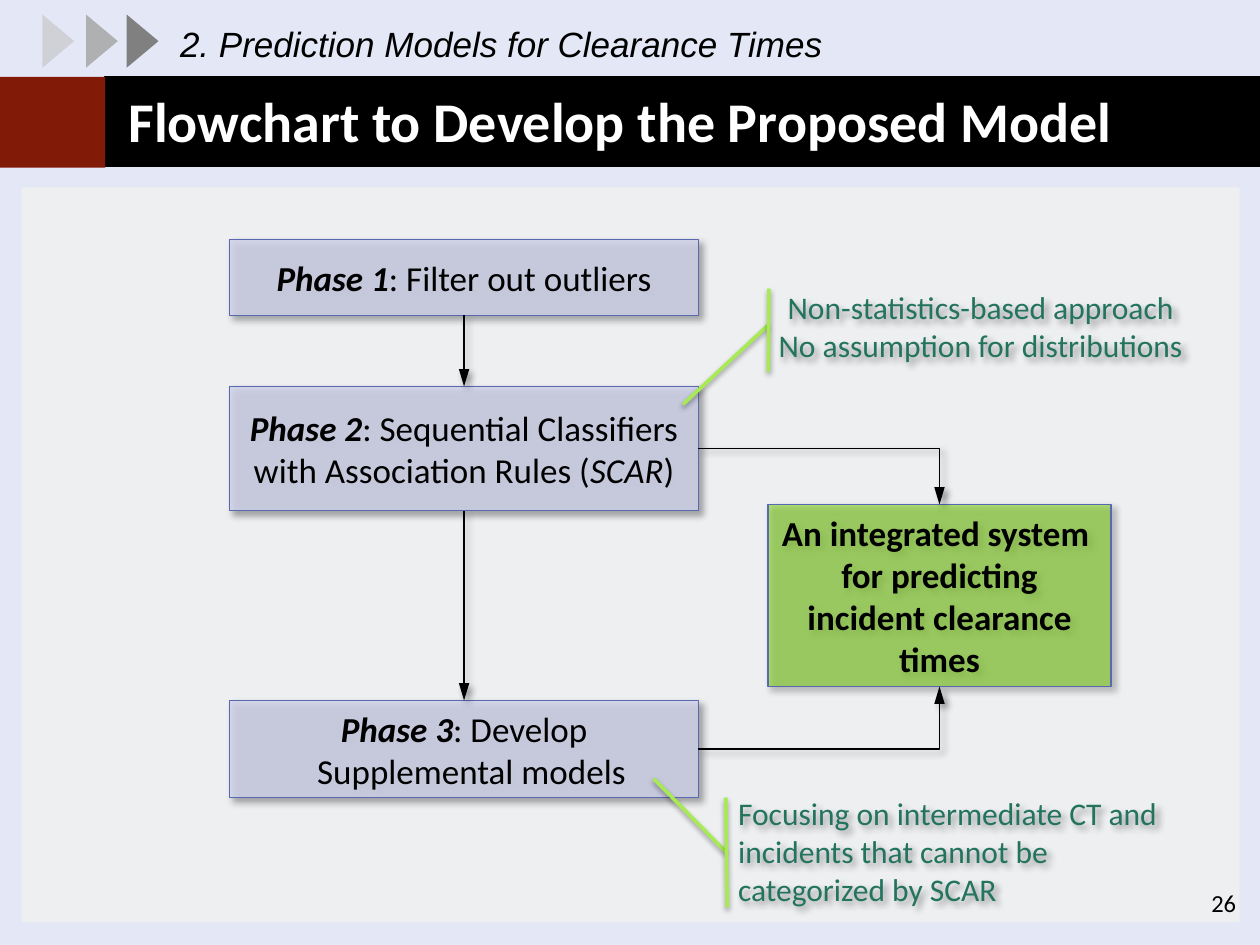
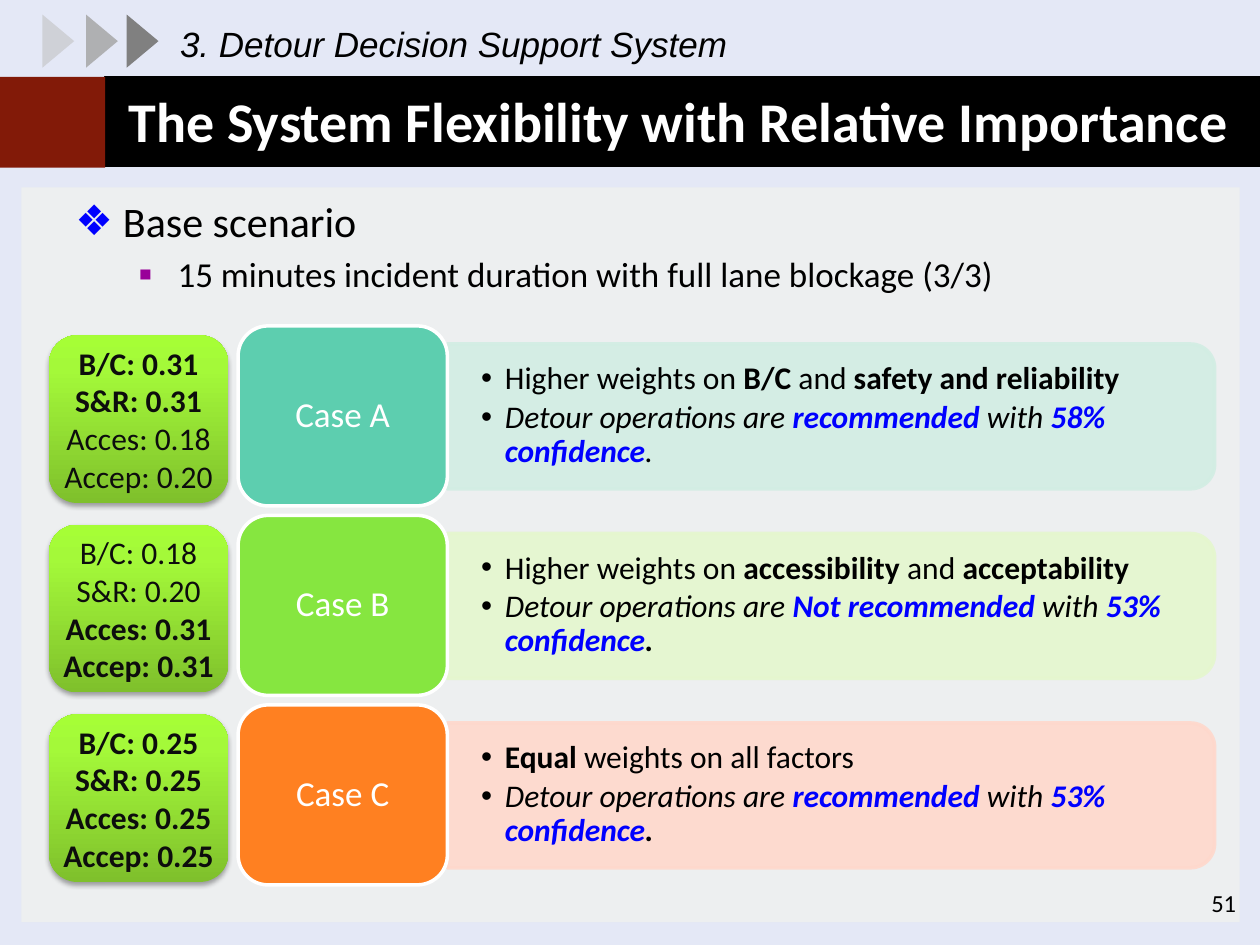
from copy import deepcopy

from lxml import etree
from pptx import Presentation
from pptx.dml.color import RGBColor
from pptx.enum.shapes import MSO_CONNECTOR, MSO_SHAPE
from pptx.enum.text import MSO_ANCHOR, PP_ALIGN
from pptx.oxml.ns import qn
from pptx.util import Cm, Pt

RECT = MSO_SHAPE.RECTANGLE
ROUND = MSO_SHAPE.ROUNDED_RECTANGLE
TAB_BAR = MSO_SHAPE.ROUND_2_SAME_RECTANGLE
WEDGE = MSO_SHAPE.ISOSCELES_TRIANGLE
LEFT, MID, RIGHT = PP_ALIGN.LEFT, PP_ALIGN.CENTER, PP_ALIGN.RIGHT
TOP, CENTRE = MSO_ANCHOR.TOP, MSO_ANCHOR.MIDDLE
LINE, ELBOW = MSO_CONNECTOR.STRAIGHT, MSO_CONNECTOR.ELBOW

COLORS = {
    "back": "E4E8F6", "cream": "FFFFCC", "white": "FFFFFF", "black": "000000",
    "red": "821A08", "dark": "808080", "mid": "A6A6A6", "pale": "BFBFBF",
    "phase": "D0D3EB", "edge": "5968B0", "goal": "81D31A",
    "note": "23735D", "lime": "A7EA52", "ink": "0D0D0D",
    "blue": "0000FF", "plum": "990099",
    "teal": "5DCEAF", "mint": "D2EDE3", "green": "86E640", "leaf": "E5F7CE",
    "orange": "FF8021", "peach": "FFD8CC",
}
GLOW = [(0, "7FC02C"), (0.8, "A4F939"), (1, "A6FE36")]
# Shadows: opacity in percent, blur and distance in points, angle in degrees
SOFT = (40, 4, 3, 45)
THIN = (38, 3.1, 1.6, 90)
DROP = (35, 3.1, 1.8, 90)


def rgb(name):
    return RGBColor.from_string(COLORS[name])


def sub(node, tag, **attrs):
    return etree.SubElement(node, qn(tag), {k: str(v) for k, v in attrs.items()})


class Deck:
    def __init__(self):
        self.prs = Presentation()
        self.prs.slide_width, self.prs.slide_height = Cm(25.4), Cm(19.05)
        self.slide = None

    def start(self, part, title, number):
        """Add a slide with its background, bands, title and number."""
        self.slide = self.prs.slides.add_slide(self.prs.slide_layouts[6])
        fill = self.slide.background.fill
        fill.solid()
        fill.fore_color.rgb = rgb("back")
        panel = (0.43, 3.78, 24.56, 14.81)
        self.shape(RECT, panel, "cream", 20)
        self.shape(RECT, (2.12, 1.55, 23.28, 1.8), "black", line="black")
        self.shape(RECT, (0, 1.55, 2.12, 1.83), "red")
        for x, color, alpha in ((2.34, "dark", 100), (1.52, "mid", 84), (0.64, "pale", 56)):
            self.shape(WEDGE, (x, 0.51, 1.07, 0.64), color, alpha).rotation = 90
        self.shape(RECT, panel, "white", 20)
        head = self.box((2.34, 1.63, 22.86, 1.57), CENTRE)
        self.para(head, [(title, "b")], 32, "white")
        self.para(self.box((3.38, 0.33, 18.62, 1.12)), [(part, "i")], 20, font="Arial")
        self.para(self.box((19.25, 17.78, 5.92, 0.89)), [(number, "")], 14, align=RIGHT)

    def shape(self, kind, area, fill=None, alpha=100, line=None, width=0.75, shade=None):
        """Add a shape; without a fill name it gets the green gradient."""
        shape = self.slide.shapes.add_shape(kind, *map(Cm, area))
        props = shape.element.spPr
        if fill:
            shape.fill.solid()
            shape.fill.fore_color.rgb = rgb(fill)
        else:
            self.glow(shape)
        if line:
            shape.line.color.rgb = rgb(line)
            shape.line.width = Pt(width)
        else:
            shape.line.fill.background()
        if alpha < 100:
            for color in props.iter(qn("a:srgbClr")):
                if color.get("val") == COLORS[fill]:
                    sub(color, "a:alpha", val=alpha * 1000)
        self.shade(shape, shade)
        return shape

    def glow(self, shape):
        shape.fill.gradient()
        shape.fill.gradient_angle = 90
        stops = shape.element.spPr.find(".//" + qn("a:gsLst"))
        stops.append(deepcopy(stops[-1]))
        for stop, (place, color) in zip(shape.fill.gradient_stops, GLOW):
            stop.position = place
            stop.color.rgb = RGBColor.from_string(color)

    def shade(self, shape, look):
        """Replace the theme's shadow by the given one, or by none."""
        effects = sub(shape.element.spPr, "a:effectLst")
        if look:
            alpha, blur, dist, angle = look
            cast = sub(effects, "a:outerShdw", blurRad=Pt(blur), dist=Pt(dist),
                       dir=angle * 60000, algn="tl", rotWithShape=0)
            color = sub(cast, "a:srgbClr", val=COLORS["black"])
            sub(color, "a:alpha", val=alpha * 1000)

    def link(self, ends, color="black", width=0.75, kind=LINE, arrow=True, shade=SOFT):
        link = self.slide.shapes.add_connector(kind, *map(Cm, ends))
        link.line.color.rgb = rgb(color)
        link.line.width = Pt(width)
        props = link.element.spPr
        if kind == ELBOW:
            props.find(qn("a:prstGeom")).set("prst", "bentConnector2")
        if arrow:
            sub(props.find(qn("a:ln")), "a:tailEnd", type="triangle", w="med", len="lg")
        self.shade(link, shade)

    def box(self, area, anchor=TOP, pad=(0.25, 0.13), shade=None):
        box = self.slide.shapes.add_textbox(*map(Cm, area))
        if shade:
            self.shade(box, shade)
        return self.frame(box, anchor, pad)

    def frame(self, shape, anchor=CENTRE, pad=(0.25, 0.13)):
        frame = shape.text_frame
        frame.word_wrap = True
        frame.vertical_anchor = anchor
        frame.margin_left = frame.margin_right = Cm(pad[0])
        frame.margin_top = frame.margin_bottom = Cm(pad[1])
        return frame

    def para(self, frame, runs, size, color="black", font="Calibri", align=LEFT,
             indent=0, hang=0, before=0, after=0, space=1.0, bullet=None):
        """Add a paragraph; run marks are b (bold), i (italic) and x (blue)."""
        para = frame.paragraphs[0]
        if para.runs:
            para = frame.add_paragraph()
        para.alignment = align
        para.line_spacing = space
        para.space_before, para.space_after = Pt(before), Pt(after)
        for text, marks in runs:
            run = para.add_run()
            run.text = text
            run.font.size, run.font.name = Pt(size), font
            run.font.bold, run.font.italic = "b" in marks, "i" in marks
            run.font.color.rgb = rgb("blue" if "x" in marks else color)
        props = para._p.get_or_add_pPr()
        props.set("marL", str(Cm(indent)))
        props.set("indent", str(-Cm(hang)))
        if bullet:
            sign, tint, scale = bullet
            sub(sub(props, "a:buClr"), "a:srgbClr", val=COLORS[tint])
            sub(props, "a:buSzPct", val=scale * 1000)
            sub(props, "a:buFont", typeface="Arial")
            sub(props, "a:buChar", char=sign)

    def note(self, area, lines, align, strokes):
        frame = self.box(area, shade=SOFT)
        for text in lines:
            self.para(frame, [(text, "")], 18, "note", align=align)
        for ends in strokes:
            self.link(ends, "lime", 2, arrow=False, shade=THIN)


def flow(deck):
    deck.start("2. Prediction Models for Clearance Times",
               "Flowchart to Develop the Proposed Model", "26")
    left, wide = 4.63, 9.45
    axis, side = left + wide / 2, left + wide
    phases = [
        (4.83, 1.53, 0, [("Phase 1", "bi"), (": Filter out outliers", "")]),
        (7.79, 2.51, 0, [("Phase 2", "bi"),
                         (": Sequential Classifiers with Association Rules (", ""),
                         ("SCAR", "i"), (")", "")]),
        (14.12, 1.96, 0.3, [("Phase 3", "bi"), (": Develop Supplemental models", "")]),
    ]
    for top, high, hang, runs in phases:
        step = deck.shape(RECT, (left, top, wide, high), "phase", 80, "edge", shade=SOFT)
        deck.para(deck.frame(step), runs, 20, align=MID, indent=hang, hang=hang)
    for (top, high, *_), (below, *_) in zip(phases, phases[1:]):
        deck.link((axis, top + high, axis, below))

    x, y, w, h = 15.48, 10.17, 6.92, 3.67
    goal = deck.frame(deck.shape(RECT, (x, y, w, h), "goal", 56, "edge", shade=SOFT))
    for text in ("An integrated system ", "for predicting incident clearance times"):
        deck.para(goal, [(text, "b")], 20, align=MID)
    for (top, high, *_), end in zip(phases[1:], (y, y + h)):
        deck.link((side, top + high / 2, x + w / 2, end), kind=ELBOW)

    deck.note((14.98, 5.68, 9.58, 1.8),
              ["Non-statistics-based approach", "No assumption for distributions"], MID,
              [(13.77, 8.15, 15.49, 6.55), (15.49, 7.49, 15.5, 5.82)])
    deck.note((14.63, 15.88, 9.58, 2.57),
              ["Focusing on intermediate CT and",
               "incidents that cannot be categorized by SCAR"], LEFT,
              [(13.18, 15.7, 14.63, 17.17), (14.63, 16.08, 14.66, 18.29)])


def cases(deck):
    deck.start("3. Detour Decision Support System",
               "The System Flexibility with Relative Importance", "51")
    body = deck.box((1.27, 3.81, 22.86, 3))
    deck.para(body, [("Base scenario", "")], 24, indent=0.96, hang=0.96, before=4.8,
              bullet=("❖", "blue", 100))
    deck.para(body, [("15 minutes incident duration with full lane blockage (3/3)", "")], 20,
              indent=2.06, hang=0.79, before=4, bullet=("▪", "plum", 115))

    names = ("B/C", "S&R", "Acces", "Accep")
    rows = [
        ("Case A", "teal", "mint", ("0.31", "0.31", "0.18", "0.20"), "bb  ",
         [("Higher weights on ", ""), ("B/C ", "b"), ("and ", ""),
          ("safety and reliability", "b")], "recommended", "58%", "i"),
        ("Case B", "green", "leaf", ("0.18", "0.20", "0.31", "0.31"), "  bb",
         [("Higher weights on ", ""), ("accessibility", "b"), (" and ", ""),
          ("acceptability", "b")], "Not recommended", "53%", "bi"),
        ("Case C", "orange", "peach", ("0.25",) * 4, "bbbb",
         [("Equal", "b"), (" weights on all factors", "")], "recommended", "53%", "bi"),
    ]
    for i, (name, color, tint, values, marks, focus, advice, share, stop) in enumerate(rows):
        drop = 3.82 * i
        bar = deck.shape(TAB_BAR, (15.29, 0.66 + drop, 2.92, 15.47), tint, 90, tint, 2)
        bar.rotation = 90
        facts = deck.box((9.01, 7.07 + drop, 15.32, 2.62), CENTRE, (0.69, 0.36))
        result = [("Detour operations are ", "i"), (advice, "bix"), (" with ", "i"),
                  (share + " confidence", "bix"), (".", stop)]
        for runs in (focus, result):
            deck.para(facts, runs, 18, indent=0.48, hang=0.48, after=2.7, space=0.9,
                      bullet=("•", "black", 100))
        case = deck.shape(ROUND, (4.8, 6.57 + drop, 4.22, 3.63), color, line="white", width=2)
        deck.para(deck.frame(case), [(name, "")], 20, "white", align=MID, space=0.9)
        card = deck.shape(ROUND, (0.99, 6.76 + drop, 3.61, 3.38), shade=DROP)
        frame = deck.frame(card, pad=(0, 0.13))
        for label, value, mark in zip(names, values, marks):
            deck.para(frame, [(f"{label}: {value}", mark)], 18, "ink", align=MID)


def main():
    deck = Deck()
    flow(deck)
    cases(deck)
    deck.prs.save("out.pptx")


if __name__ == "__main__":
    main()
